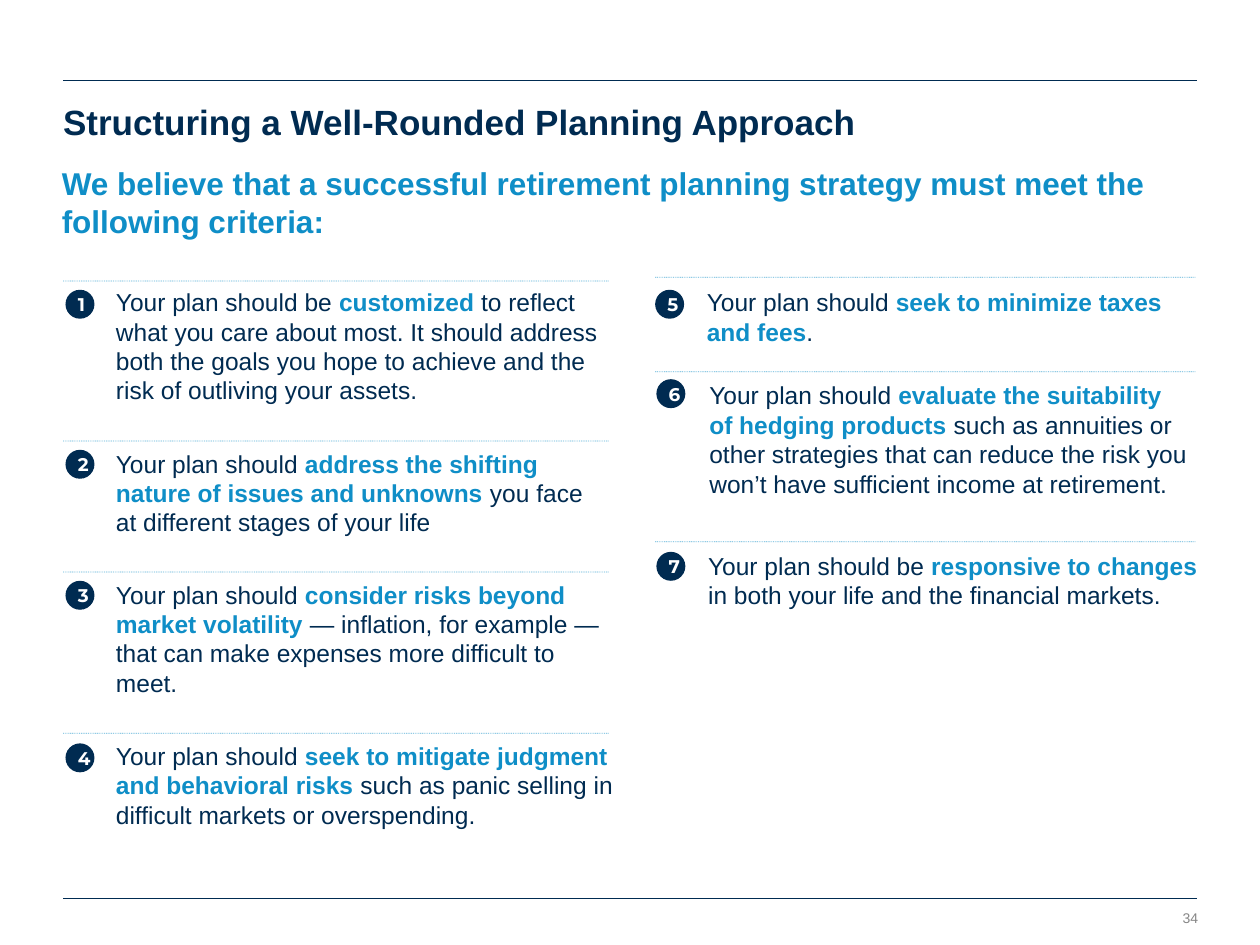
import pptx
import pptx.util
import pptx.dml.color
import pptx.enum.dml
import pptx.enum.shapes
import pptx.enum.text
import lxml.etree
import pptx.oxml.ns

NAVY, BLUE, GREY, WHITE = "002B51", "0F8EC7", "868686", "FFFFFF"
color = pptx.dml.color.RGBColor.from_string
qn = pptx.oxml.ns.qn

deck = pptx.Presentation()
deck.slide_width = pptx.util.Inches(10)
deck.slide_height = pptx.util.Inches(7.5)
column = deck.slide_width / 100
row = deck.slide_height / 75
page = deck.slides.add_slide(deck.slide_layouts[5])


def add_rule(left, right, top, tint, weight, dotted=False):
    rule = page.shapes.add_connector(
        pptx.enum.shapes.MSO_CONNECTOR.STRAIGHT,
        int(left * column), int(top * row), int(right * column), int(top * row))
    rule.line.color.rgb = color(tint)
    rule.line.width = pptx.util.Pt(weight)
    if dotted:
        rule.line.dash_style = pptx.enum.dml.MSO_LINE.ROUND_DOT
        tone = next(rule.line._ln.iter(qn("a:srgbClr")))
        lxml.etree.SubElement(tone, qn("a:alpha"), val="70000")
    lxml.etree.SubElement(rule._element.spPr, qn("a:effectLst"))


def set_text(box, place, text, size, tint, bold=False, wrap=True):
    """Place a box without margins; parts between asterisks are emphasised."""
    box.left, box.top = int(place[0] * column), int(place[1] * row)
    box.width, box.height = int(place[2] * column), int(place[3] * row)
    frame = box.text_frame
    frame.margin_left = frame.margin_right = frame.margin_top = frame.margin_bottom = 0
    frame.auto_size = pptx.enum.text.MSO_AUTO_SIZE.NONE
    frame.vertical_anchor = pptx.enum.text.MSO_ANCHOR.TOP
    frame.word_wrap = wrap
    para = frame.paragraphs[0]
    para.alignment = pptx.enum.text.PP_ALIGN.LEFT
    para.font.name = "Arial"
    para.font.size = pptx.util.Pt(size)
    para.font.bold = bold
    para.font.color.rgb = color(tint)
    for part, words in enumerate(text.split("*")):
        for number, line in enumerate(words.split("\n")):
            if number:
                para.add_line_break()
            span = para.add_run()
            span.text = line
            if part % 2:
                span.font.bold = True
                span.font.color.rgb = color(BLUE)
    return para


# Page frame and number
add_rule(5, 95, 6.4, NAVY, 1)
add_rule(5, 95, 71.3, NAVY, 0.5)
number_para = set_text(page.shapes.add_textbox(0, 0, 0, 0), (93.7, 72.2, 1.4, 1.3),
                       "34", 8, GREY, wrap=False)
number_para.alignment = pptx.enum.text.PP_ALIGN.RIGHT

# Title and lead sentence
set_text(page.shapes.title, (5, 8, 89.9, 3.4),
         "Structuring a Well-Rounded Planning Approach", 20, NAVY, bold=True)
set_text(page.shapes.add_textbox(0, 0, 0, 0), (4.9, 13, 89.9, 6.1),
         "We believe that a successful retirement planning strategy must meet the "
         "following criteria:", 18, BLUE, bold=True)

# Criteria: rule top, badge left and top, text left, top, width and line count, wording
left_rule, right_rule = (5, 48.3), (52, 94.9)
criteria = [
    (left_rule, 22.3, 5.2, 23, 9.2, 22.8, 39.5, 4,
     "Your plan should be *customized* to reflect what you care about most. It should "
     "address both the goals you hope to achieve and the risk of outliving your assets."),
    (left_rule, 35, 5.2, 35.7, 9.2, 35.6, 39, 3,
     "Your plan should *address the shifting nature of issues and unknowns *"
     "you face at different stages of your life"),
    (left_rule, 45.4, 5.2, 46.1, 9.2, 46, 39.5, 4,
     "Your plan should *consider risks beyond market volatility *"
     "— inflation, for example — that can make expenses more difficult to meet."),
    (left_rule, 58.2, 5.2, 59, 9.2, 58.8, 39.5, 3,
     "Your plan should *seek to mitigate judgment and behavioral risks *"
     "such as panic selling in difficult markets or overspending."),
    (right_rule, 22, 52, 23, 56.1, 22.8, 39.5, 2,
     "Your plan should *seek to minimize taxes and fees*."),
    (right_rule, 29.5, 52.1, 30.1, 56.3, 30.2, 39, 4,
     "Your plan should *evaluate the suitability \nof hedging products *"
     "such as annuities or other strategies that can reduce the risk you "
     "won’t have sufficient income at retirement."),
    (right_rule, 43, 52.1, 43.8, 56.2, 43.7, 39, 2,
     "Your plan should be *responsive to changes *"
     "in both your life and the financial markets."),
]
for number, (ends, rule_top, badge_left, badge_top, left, top, width, lines,
             wording) in enumerate(criteria, 1):
    add_rule(*ends, rule_top, BLUE, 0.5, dotted=True)
    set_text(page.shapes.add_textbox(0, 0, 0, 0), (left, top, width, 2.35 * lines),
             wording, 14, NAVY)

    # Numbered badge
    badge = page.shapes.add_shape(
        pptx.enum.shapes.MSO_SHAPE.OVAL, int(badge_left * column), int(badge_top * row),
        int(2.3 * column), int(2.3 * row))
    badge.shadow.inherit = False
    badge.fill.solid()
    badge.fill.fore_color.rgb = color(NAVY)
    badge.line.fill.background()
    badge.text_frame.vertical_anchor = pptx.enum.text.MSO_ANCHOR.MIDDLE
    para = badge.text_frame.paragraphs[0]
    para.text = str(number)
    para.alignment = pptx.enum.text.PP_ALIGN.CENTER
    para.font.name = "Montserrat"
    para.font.size = pptx.util.Pt(10.5)
    para.font.bold = True
    para.font.color.rgb = color(WHITE)

deck.save("out.pptx")
